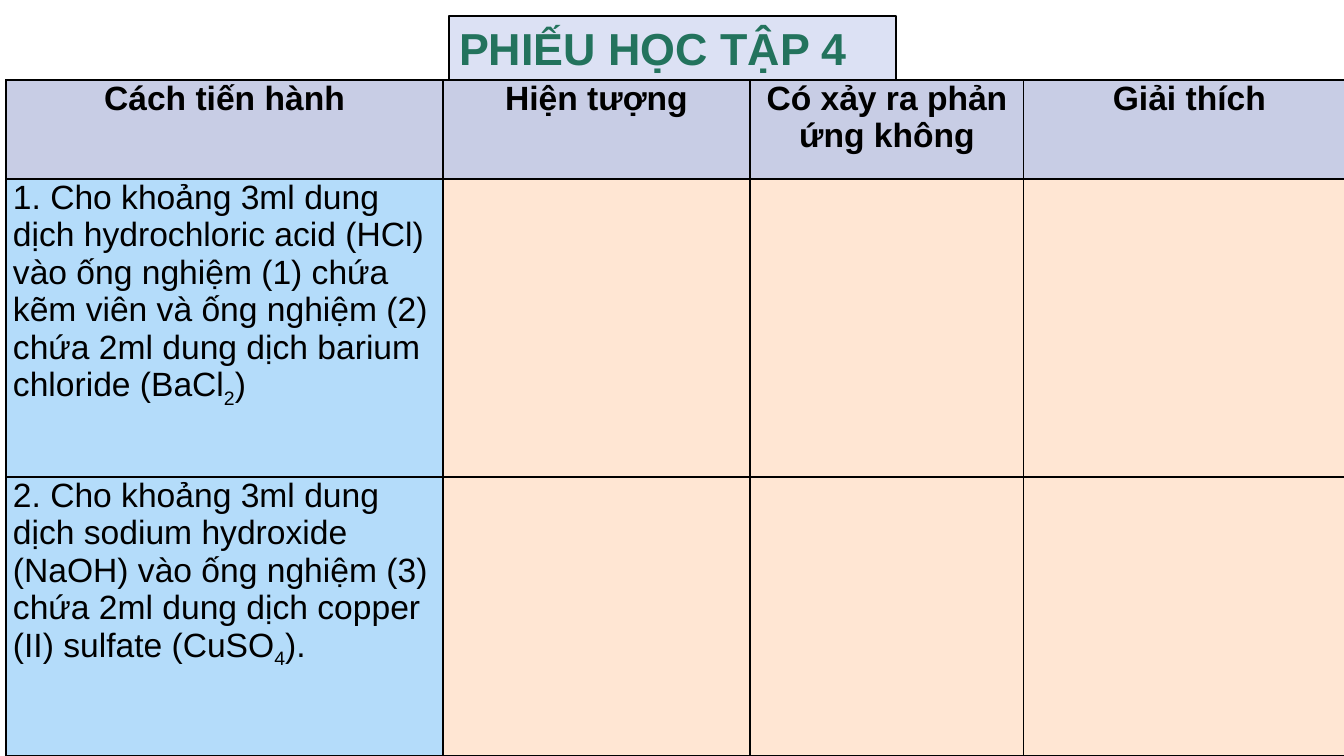
"""Build the worksheet slide: a boxed title above a table of experiments."""
from lxml import etree
from pptx import Presentation
from pptx import util as u
from pptx.dml.color import RGBColor
from pptx.enum import text
from pptx.oxml import ns

PX = 914400 / 100.8
FONT = "Arial"
BLACK = "000000"
HEADER_FILL, STEP_FILL, ANSWER_FILL = "C8CDE5", "B4DCFA", "FFE6D3"
COLUMNS = (437, 307, 274, 331)
ROWS = (99, 298, 279)
HEADERS = ("Cách tiến hành", "Hiện tượng", "Có xảy ra phản ứng không", "Giải thích")
STEPS = (
    ("1. Cho khoảng 3ml dung dịch hydrochloric acid (HCl) vào ống nghiệm (1) chứa "
     "kẽm viên và ống nghiệm (2) chứa 2ml dung dịch barium chloride (BaCl", "2", ")"),
    ("2. Cho khoảng 3ml dung dịch sodium hydroxide (NaOH) vào ống nghiệm (3) chứa "
     "2ml dung dịch copper (II) sulfate (CuSO", "4", ")."),
)


def px(length):
    """Turn pixels into EMU."""
    return u.Emu(round(length * PX))


def color(value):
    """Turn a hex string into a colour."""
    return RGBColor.from_string(value)


def paint(target, value):
    """Give a shape or cell a solid fill."""
    target.fill.solid()
    target.fill.fore_color.rgb = color(value)


def style(font, size, value, bold):
    """Set the look of a run."""
    font.name, font.size, font.bold = FONT, u.Pt(size), bold
    font.color.rgb = color(value)


def add_title(page, wording):
    """Place the title in a bordered box."""
    box = page.shapes.title
    box.left, box.top, box.width, box.height = px(449), px(16), px(447), px(65)
    paint(box, "DCE1F4")
    box.line.color.rgb = color(BLACK)
    box.line.width = u.Pt(1)
    frame = box.text_frame
    frame.text = wording
    frame.word_wrap = True
    frame.auto_size = text.MSO_AUTO_SIZE.SHAPE_TO_FIT_TEXT
    frame.vertical_anchor = text.MSO_ANCHOR.TOP
    para = frame.paragraphs[0]
    para.alignment = text.PP_ALIGN.LEFT
    style(para.runs[0].font, 32, "23735D", True)


def add_borders(cell):
    """Draw a thin black line on every side of a cell."""
    properties = cell._tc.get_or_add_tcPr()
    for side in ("a:lnL", "a:lnR", "a:lnT", "a:lnB"):
        line = etree.SubElement(properties, ns.qn(side), w=str(u.Pt(1)))
        fill = etree.SubElement(line, ns.qn("a:solidFill"))
        etree.SubElement(fill, ns.qn("a:srgbClr"), val=BLACK)


def format_cell(cell, fill):
    """Set the margins, borders and fill of a cell."""
    cell.margin_left = cell.margin_right = px(7)
    cell.margin_top = cell.margin_bottom = 0
    add_borders(cell)
    paint(cell, fill)


def write_cell(cell, parts, bold, alignment):
    """Write text in which every second part is a subscript."""
    para = cell.text_frame.paragraphs[0]
    para.alignment = alignment
    for index, part in enumerate(parts):
        span = para.add_run()
        span.text = part
        style(span.font, 24, BLACK, bold)
        if index % 2:
            span._r.get_or_add_rPr().set("baseline", "-25000")


def add_worksheet(page):
    """Add the table with its headers and experiment steps."""
    frame = page.shapes.add_table(len(ROWS), len(COLUMNS), px(6), px(80),
                                  px(sum(COLUMNS)), px(sum(ROWS)))
    table = frame.table
    table.horz_banding = False
    for column, width in zip(table.columns, COLUMNS):
        column.width = px(width)
    for row, height in zip(table.rows, ROWS):
        row.height = px(height)
    for index, header in enumerate(HEADERS):
        cell = table.cell(0, index)
        format_cell(cell, HEADER_FILL)
        write_cell(cell, (header,), True, text.PP_ALIGN.CENTER)
    for number, step in enumerate(STEPS, 1):
        for index in range(len(COLUMNS)):
            format_cell(table.cell(number, index), ANSWER_FILL if index else STEP_FILL)
        write_cell(table.cell(number, 0), step, False, text.PP_ALIGN.LEFT)


def main():
    """Build and save the deck."""
    deck = Presentation()
    deck.slide_width, deck.slide_height = px(1344), px(756)
    page = deck.slides.add_slide(deck.slide_layouts[5])
    add_title(page, "PHIẾU HỌC TẬP 4")
    add_worksheet(page)
    deck.save("out.pptx")


if __name__ == "__main__":
    main()
